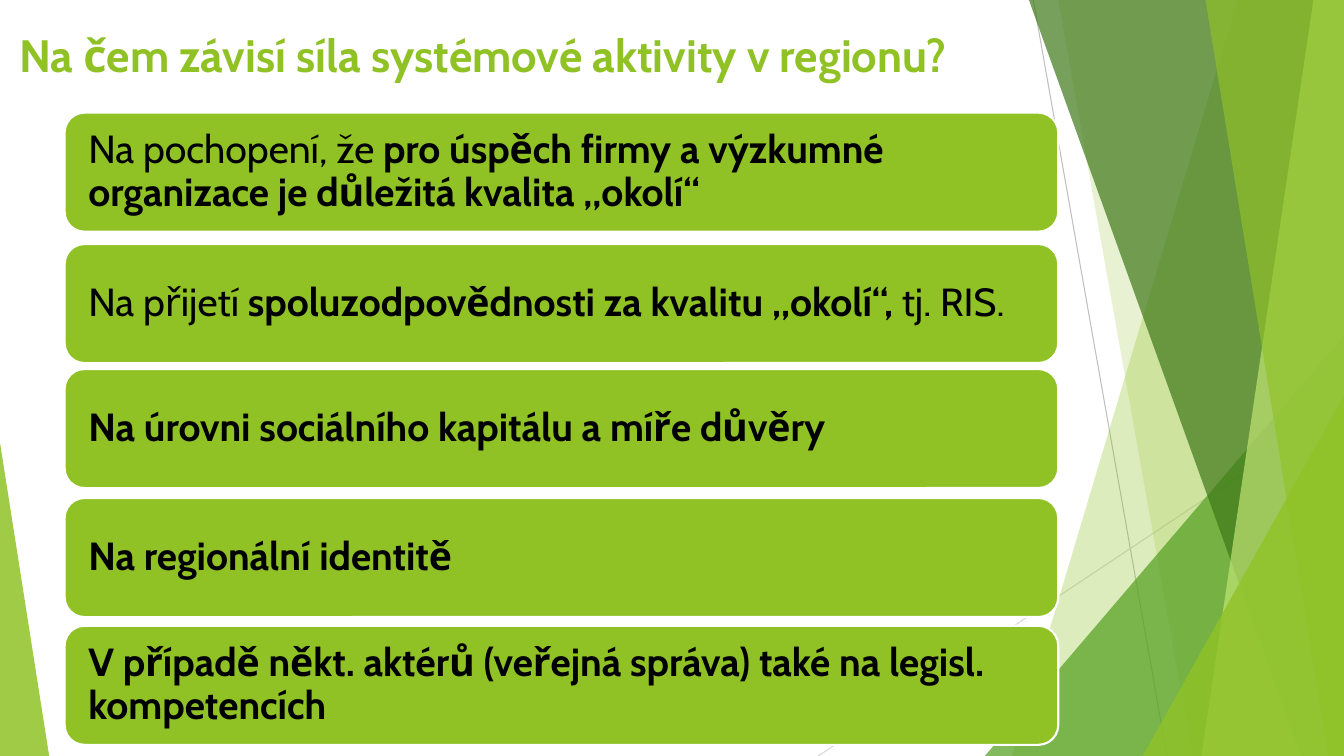
from lxml.etree import SubElement
from pptx import Presentation
from pptx.dml.color import RGBColor
from pptx.enum.shapes import MSO_CONNECTOR, MSO_SHAPE
from pptx.enum.text import MSO_ANCHOR as ANCHOR, PP_ALIGN as ALIGN
from pptx.oxml.ns import qn
from pptx.util import Cm, Pt

# Content: each card is (top in cm, [(text, bold), ...])
TITLE = "Na čem závisí síla systémové aktivity v regionu?"
CARDS = [
    (2.84, [("Na pochopení, že ", False),
            ("pro úspěch firmy a výzkumné organizace je důležitá kvalita „okolí“", True)]),
    (6.15, [("Na přijetí ", False),
            ("spoluzodpovědnosti za kvalitu „okolí“, ", True),
            ("tj. RIS.", False)]),
    (9.30, [("Na úrovni sociálního kapitálu a míře důvěry", True)]),
    (12.55, [("Na regionální identitě", True)]),
    (15.77, [("V případě někt. aktérů (veřejná správa) také na legisl. kompetencích", True)]),
]


class Theme:
    font = "Cabin"
    title_size, card_size = Pt(32.4), Pt(28)
    green, leaf, forest, lime = "90C226", "54A021", "3F7819", "C0E474"
    text, white = "000000", "FFFFFF"
    line_dark, line_light = "BFBFBF", "D9D9D9"


# Backdrop geometry in cm
W, H = 33.87, 19.05
LINES = [
    (26.04, 0, 29.41, H, Theme.line_dark),
    (W, 10.24, 20.62, H, Theme.line_light),
]
# Facets reach the right edge: (kind, top x, bottom x, colour, opacity %)
# Triangles stand on the bottom edge: (kind, left, top, width, apex, colour, opacity %)
BACKDROP = [
    ("facet", 31.19, 25.50, Theme.green, 30),
    ("facet", 26.67, 30.05, Theme.green, 20),
    ("triangle", 24.82, 8.46, W - 24.82, 1, Theme.leaf, 72),
    ("facet", 25.93, 32.79, Theme.forest, 70),
    ("facet", 33.10, 30.28, Theme.lime, 70),
    ("facet", 30.38, 33.48, Theme.green, 65),
    ("triangle", 28.80, 9.98, W - 28.80, 1, Theme.green, 80),
    ("triangle", 0, 11.15, 1.24, 0, Theme.green, 85),
]
CARD_LEFT, CARD_W, CARD_H, CARD_INSET = 1.63, 25.04, 3.0, 0.45


def rgb(color):
    return RGBColor.from_string(color)


def paint(s, color, opacity=100):
    s.shadow.inherit = False
    s.fill.solid()
    s.fill.fore_color.rgb = rgb(color)
    s.line.fill.background()
    if opacity < 100:
        clr = s.fill._xPr.find(qn("a:solidFill"))[0]
        SubElement(clr, qn("a:alpha")).set("val", str(opacity * 1000))


def add_line(shapes, x1, y1, x2, y2, color):
    s = shapes.add_connector(MSO_CONNECTOR.STRAIGHT, Cm(x1), Cm(y1), Cm(x2), Cm(y2))
    s.line.color.rgb = rgb(color)
    s.line.width = Pt(0.75)
    SubElement(s._element.spPr, qn("a:effectLst"))


def add_facet(shapes, top_x, bottom_x, color, opacity):
    builder = shapes.build_freeform(Cm(top_x), 0)
    builder.add_line_segments([(Cm(W), 0), (Cm(W), Cm(H)), (Cm(bottom_x), Cm(H))])
    paint(builder.convert_to_shape(), color, opacity)


def add_triangle(shapes, left, top, width, apex, color, opacity):
    s = shapes.add_shape(MSO_SHAPE.ISOSCELES_TRIANGLE,
                         Cm(left), Cm(top), Cm(width), Cm(H - top))
    s.adjustments[0] = apex
    paint(s, color, opacity)


def write(s, runs, size, color, anchor):
    tf = s.text_frame
    tf.word_wrap = True
    tf.vertical_anchor = anchor
    p = tf.paragraphs[0]
    p.alignment = ALIGN.LEFT
    p.font.name, p.font.size = Theme.font, size
    p.font.color.rgb = rgb(color)
    for text, bold in runs:
        r = p.add_run()
        r.text, r.font.bold = text, bold
    return tf


def add_card(shapes, top, runs):
    s = shapes.add_shape(MSO_SHAPE.ROUNDED_RECTANGLE,
                         Cm(CARD_LEFT), Cm(top), Cm(CARD_W), Cm(CARD_H))
    paint(s, Theme.green)
    s.line.color.rgb = rgb(Theme.white)
    s.line.width = Pt(1.5)
    tf = write(s, runs, Theme.card_size, Theme.text, ANCHOR.MIDDLE)
    tf.margin_left = tf.margin_right = Cm(CARD_INSET)
    tf.paragraphs[0].line_spacing = 0.9


def main():
    prs = Presentation()
    prs.slide_width, prs.slide_height = Cm(W), Cm(H)
    # Title-only layout keeps the heading a real title
    slide = prs.slides.add_slide(prs.slide_layouts[6])
    shapes = slide.shapes

    # Backdrop, back to front
    for line in LINES:
        add_line(shapes, *line)
    draw = {"facet": add_facet, "triangle": add_triangle}
    for kind, *args in BACKDROP:
        draw[kind](shapes, *args)

    # Title
    s = shapes.add_textbox(Cm(0.23), Cm(0.56), Cm(26.64), Cm(2.03))
    write(s, [(TITLE, True)], Theme.title_size, Theme.green, ANCHOR.TOP)

    # Cards
    for top, runs in CARDS:
        add_card(shapes, top, runs)

    prs.save("out.pptx")


if __name__ == "__main__":
    main()
